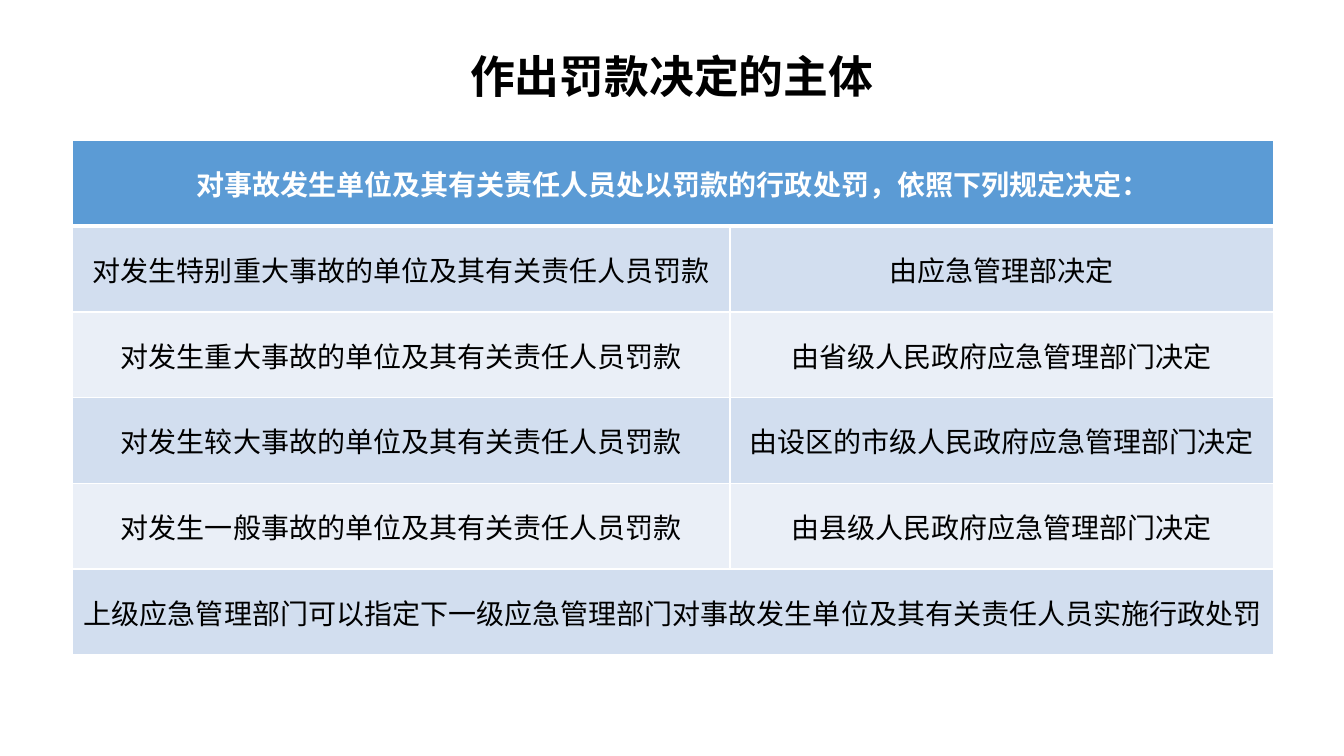
from lxml import etree
from pptx import Presentation
from pptx import util as u
from pptx.dml.color import RGBColor
from pptx.enum import text
from pptx.oxml import ns

FONT = "Noto Sans CJK SC"
COLORS = {
    "text": "000000",
    "white": "FFFFFF",
    "header": "5B9BD5",
    "dark_band": "D2DEEF",
    "light_band": "EAEFF7",
}
TITLE = "作出罚款决定的主体"
# A row with one entry spans both columns
ROWS = [
    ["对事故发生单位及其有关责任人员处以罚款的行政处罚，依照下列规定决定："],
    ["对发生特别重大事故的单位及其有关责任人员罚款", "由应急管理部决定"],
    ["对发生重大事故的单位及其有关责任人员罚款", "由省级人民政府应急管理部门决定"],
    ["对发生较大事故的单位及其有关责任人员罚款", "由设区的市级人民政府应急管理部门决定"],
    ["对发生一般事故的单位及其有关责任人员罚款", "由县级人民政府应急管理部门决定"],
    ["上级应急管理部门可以指定下一级应急管理部门对事故发生单位及其有关责任人员实施行政处罚"],
]
COLUMN_WIDTHS = [469.5, 388]
ROW_HEIGHT = 61.2


def write(frame, words, color, size, bold=False):
    """Put one centred line of text into a text frame."""
    paragraph = frame.paragraphs[0]
    paragraph.alignment = text.PP_ALIGN.CENTER
    run = paragraph.add_run()
    run.text = words
    formats = {"name": FONT, "size": u.Pt(size), "bold": bold}
    for name, value in formats.items():
        setattr(run.font, name, value)
    run.font.color.rgb = RGBColor.from_string(COLORS[color])
    # Chinese characters take the East Asian typeface
    etree.SubElement(run.font._element, ns.qn("a:ea"), typeface=FONT)
    return paragraph


def set_borders(cell, widths):
    """Draw white cell borders; widths maps each side to points."""
    properties = cell._tc.get_or_add_tcPr()
    for index, (side, width) in enumerate(widths.items()):
        line = etree.Element(ns.qn(f"a:ln{side}"), w=str(u.Pt(width)))
        fill = etree.SubElement(line, ns.qn("a:solidFill"))
        etree.SubElement(fill, ns.qn("a:srgbClr"), val=COLORS["white"])
        properties.insert(index, line)


def add_title(slide):
    box = slide.shapes.add_textbox(u.Pt(66), u.Pt(28.8), u.Pt(828), u.Pt(55.4))
    frame = box.text_frame
    frame.word_wrap = True
    frame.vertical_anchor = text.MSO_ANCHOR.MIDDLE
    write(frame, TITLE, "text", 32, bold=True).line_spacing = 0.9


def add_penalty_table(slide):
    table = slide.shapes.add_table(
        len(ROWS), len(COLUMN_WIDTHS), u.Pt(52), u.Pt(100.4),
        u.Pt(sum(COLUMN_WIDTHS)), u.Pt(ROW_HEIGHT * len(ROWS))).table
    for column, width in zip(table.columns, COLUMN_WIDTHS):
        column.width = u.Pt(width)

    for row_index, entries in enumerate(ROWS):
        table.rows[row_index].height = u.Pt(ROW_HEIGHT)
        is_header = row_index == 0
        band = "header" if is_header else "dark_band" if row_index % 2 else "light_band"
        # A heavier rule separates the header from the body
        widths = {"L": 1, "R": 1, "T": 3 if row_index == 1 else 1,
                  "B": 3 if is_header else 1}
        cells = list(table.rows[row_index].cells)
        for cell in cells:
            cell.fill.solid()
            cell.fill.fore_color.rgb = RGBColor.from_string(COLORS[band])
            cell.vertical_anchor = text.MSO_ANCHOR.MIDDLE
            set_borders(cell, widths)
        if len(entries) == 1:
            cells[0].merge(cells[-1])
        for cell, words in zip(cells, entries):
            write(cell.text_frame, words, "white" if is_header else "text", 20, is_header)


def main():
    presentation = Presentation()
    presentation.slide_width = u.Pt(960)
    presentation.slide_height = u.Pt(540)
    slide = presentation.slides.add_slide(presentation.slide_layouts[6])
    add_title(slide)
    add_penalty_table(slide)
    presentation.save("out.pptx")


if __name__ == "__main__":
    main()
